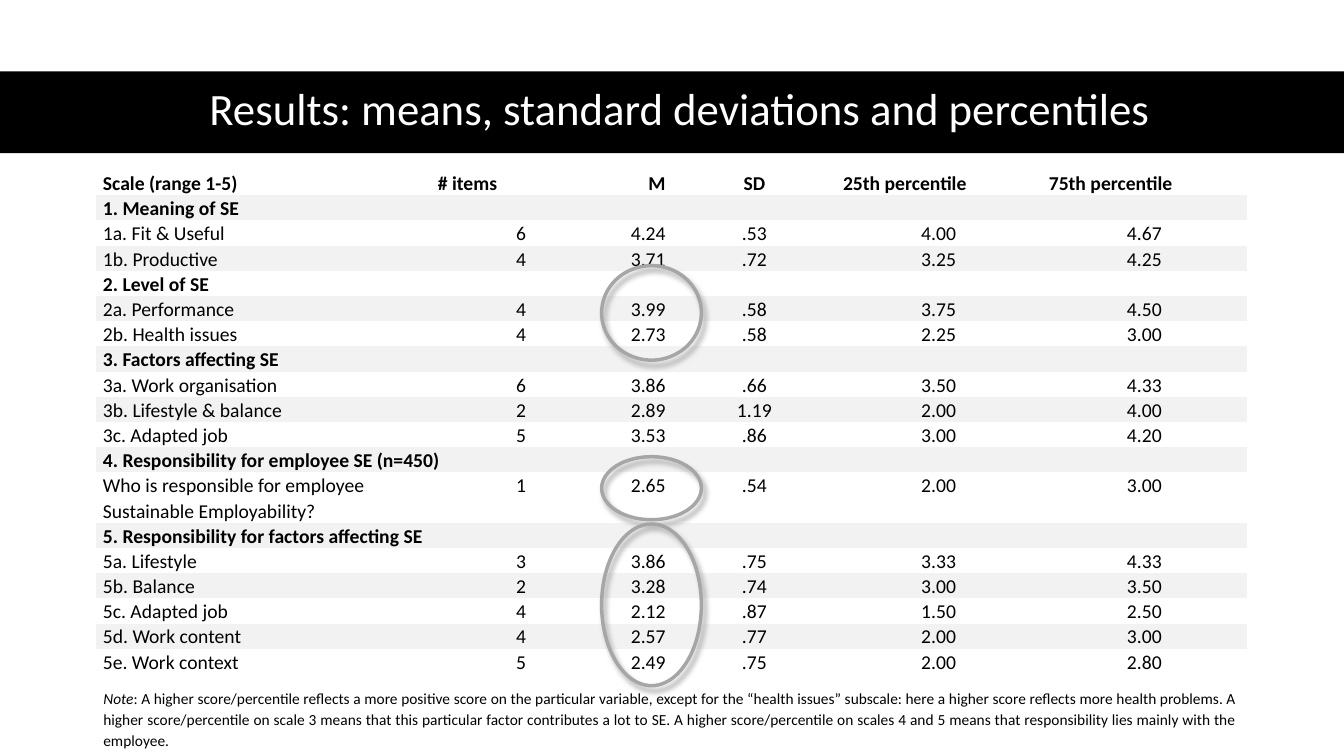
from dataclasses import dataclass

from lxml import etree
from pptx import Presentation
from pptx.dml.color import RGBColor
from pptx.enum.shapes import MSO_SHAPE as Shape
from pptx.enum.text import MSO_ANCHOR as Anchor, MSO_AUTO_SIZE as AutoSize, PP_ALIGN as Align
from pptx.oxml.ns import qn
from pptx.util import Pt

PX = 9525  # EMU per px, 96 px to the inch
FONT = "Calibri"
BLACK, WHITE, STRIPE, RING = "000000", "FFFFFF", "F2F2F2", "A6A6A6"
NO_STYLE = "{2D5ABB26-0587-4C30-8999-92F81FD0307C}"
TABLE_PT = 14


@dataclass(frozen=True)
class Box:
    left: int
    top: int
    width: int
    height: int

    def emu(self) -> list[int]:
        return [v * PX for v in (self.left, self.top, self.width, self.height)]


@dataclass(frozen=True)
class Row:
    """One table row; each span is a (first column, last column) merge."""
    label: str
    values: tuple[str, ...] = ()
    spans: tuple[tuple[int, int], ...] = ((2, 3),)
    label_align: Align = Align.JUSTIFY
    height: int = 23


TABLE_BOX = Box(91, 162, 1097, 465)
COLUMN_WIDTHS = (319, 98, 12, 121, 155, 196, 196)
VALUE_COLUMNS = (1, 2, 4, 5, 6)
VALUE_ALIGNS = (Align.RIGHT, Align.RIGHT, Align.CENTER, Align.CENTER, Align.CENTER)
HEADER_COLUMNS = (1, 3, 4, 5, 6)
HEADER_ALIGNS = (Align.JUSTIFY, Align.RIGHT, Align.CENTER, Align.JUSTIFY, Align.JUSTIFY)
PAIRS = ((0, 1), (2, 3))

ROWS = (
    Row("Scale (range 1-5)", ("# items", "M", "SD", "25th percentile", "75th percentile"), ((1, 2),)),
    Row("1. Meaning of SE", spans=PAIRS),
    Row("1a. Fit & Useful", ("6", "4.24", ".53", "4.00", "4.67")),
    Row("1b. Productive", ("4", "3.71", ".72", "3.25", "4.25")),
    Row("2. Level of SE", spans=PAIRS),
    Row("2a. Performance", ("4", "3.99", ".58", "3.75", "4.50")),
    Row("2b. Health issues", ("4", "2.73", ".58", "2.25", "3.00"), label_align=Align.LEFT),
    Row("3. Factors affecting SE", spans=((0, 3),), label_align=Align.LEFT),
    Row("3a. Work organisation", ("6", "3.86", ".66", "3.50", "4.33"), label_align=Align.LEFT),
    Row("3b. Lifestyle & balance", ("2", "2.89", "1.19", "2.00", "4.00"), label_align=Align.LEFT),
    Row("3c. Adapted job", ("5", "3.53", ".86", "3.00", "4.20")),
    Row("4. Responsibility for employee SE (n=450)", spans=((0, 5),)),
    Row("Who is responsible for employee Sustainable Employability?",
        ("1", "2.65", ".54", "2.00", "3.00"), label_align=Align.LEFT, height=43),
    Row("5. Responsibility for factors affecting SE", spans=((0, 4),)),
    Row("5a. Lifestyle", ("3", "3.86", ".75", "3.33", "4.33")),
    Row("5b. Balance", ("2", "3.28", ".74", "3.00", "3.50")),
    Row("5c. Adapted job", ("4", "2.12", ".87", "1.50", "2.50")),
    Row("5d. Work content", ("4", "2.57", ".77", "2.00", "3.00")),
    Row("5e. Work context", ("5", "2.49", ".75", "2.00", "2.80")),
)

RINGS = (Box(573, 253, 95, 90), Box(573, 499, 95, 154), Box(573, 435, 95, 60))

NOTE = (
    ": A higher score/percentile reflects a more positive score on the particular variable, "
    "except for the “health issues” subscale: here a higher score reflects more health problems. "
    "A higher score/percentile on scale 3 means that this particular factor contributes a lot to SE. "
    "A higher score/percentile on scales 4 and 5 means that responsibility lies mainly with the employee."
)


def rgb(color: str) -> RGBColor:
    return RGBColor.from_string(color)


def style(p, size: int, align: Align, spacing: float, color: str = BLACK, bold: bool = False) -> None:
    p.alignment, p.line_spacing = align, spacing
    p.font.name, p.font.size, p.font.bold = FONT, Pt(size), bold
    p.font.color.rgb = rgb(color)


def add_title(slide) -> None:
    band = slide.shapes.add_shape(Shape.RECTANGLE, *Box(0, 68, 1280, 78).emu())
    band.shadow.inherit = False
    band.fill.solid()
    band.fill.fore_color.rgb = rgb(BLACK)
    band.line.fill.background()

    tf = slide.shapes.add_textbox(*Box(59, 67, 1177, 78).emu()).text_frame
    tf.word_wrap = True
    tf.vertical_anchor = Anchor.MIDDLE
    tf.margin_left = tf.margin_right = tf.margin_top = tf.margin_bottom = 0
    p = tf.paragraphs[0]
    p.text = "Results: means, standard deviations and percentiles"
    style(p, 32, Align.CENTER, 0.9, WHITE)


def fill_cell(cell, text: str, align: Align, bold: bool) -> None:
    p = cell.text_frame.paragraphs[0]
    style(p, TABLE_PT, align, 1.07, bold=bold)
    if text:
        p.text = text
    else:  # keeps an empty cell as low as its row
        etree.SubElement(p._p, qn("a:endParaRPr"), sz=str(TABLE_PT * 100))


def add_results(slide) -> None:
    table = slide.shapes.add_table(len(ROWS), len(COLUMN_WIDTHS), *TABLE_BOX.emu()).table
    table.first_row = table.horz_banding = False
    table._tbl.tblPr.find(qn("a:tableStyleId")).text = NO_STYLE
    for column, width in zip(table.columns, COLUMN_WIDTHS):
        column.width = width * PX

    for i, row in enumerate(ROWS):
        table.rows[i].height = row.height * PX
        for first, last in row.spans:
            table.cell(i, first).merge(table.cell(i, last))
        header = i == 0
        columns = HEADER_COLUMNS if header else VALUE_COLUMNS
        aligns = HEADER_ALIGNS if header else VALUE_ALIGNS
        content = {0: (row.label, row.label_align)}
        content.update(zip(columns, zip(row.values, aligns)))
        for j in range(len(COLUMN_WIDTHS)):
            cell = table.cell(i, j)
            cell.margin_left = cell.margin_right = 7 * PX
            cell.margin_top = cell.margin_bottom = 0
            if i % 2:
                cell.fill.solid()
                cell.fill.fore_color.rgb = rgb(STRIPE)
            else:
                cell.fill.background()
            text, align = content.get(j, ("", Align.LEFT))
            fill_cell(cell, text, align, bold=header or not row.values)


def add_ring(slide, box: Box) -> None:
    sp = slide.shapes.add_shape(Shape.OVAL, *box.emu())
    sp.fill.background()
    sp.line.color.rgb = rgb(RING)
    sp.line.width = Pt(2.5)
    sp.shadow.inherit = False
    effects = sp._element.spPr.find(qn("a:effectLst"))
    shadow = etree.SubElement(effects, qn("a:outerShdw"), blurRad=str(Pt(4)), dist=str(Pt(4)),
                              dir=str(60 * 60000), rotWithShape="0")
    etree.SubElement(shadow, qn("a:srgbClr"), val=RING)


def add_note(slide) -> None:
    tf = slide.shapes.add_textbox(*Box(41, 649, 1147, 70).emu()).text_frame
    tf.word_wrap = True
    tf.auto_size = AutoSize.SHAPE_TO_FIT_TEXT
    p = tf.paragraphs[0]
    style(p, 11, Align.JUSTIFY, 1.15)
    p.space_after = Pt(8)
    pPr = p._p.get_or_add_pPr()
    pPr.set("marL", str(48 * PX))
    pPr.set("indent", "0")
    for text, italic in (("Note", True), (NOTE, False)):
        r = p.add_run()
        r.text = text
        r.font.italic = italic


def main() -> None:
    prs = Presentation()
    prs.slide_width, prs.slide_height = 1280 * PX, 720 * PX
    slide = prs.slides.add_slide(prs.slide_layouts[6])
    add_title(slide)
    add_results(slide)
    for box in RINGS:
        add_ring(slide, box)
    add_note(slide)
    prs.save("out.pptx")


if __name__ == "__main__":
    main()
